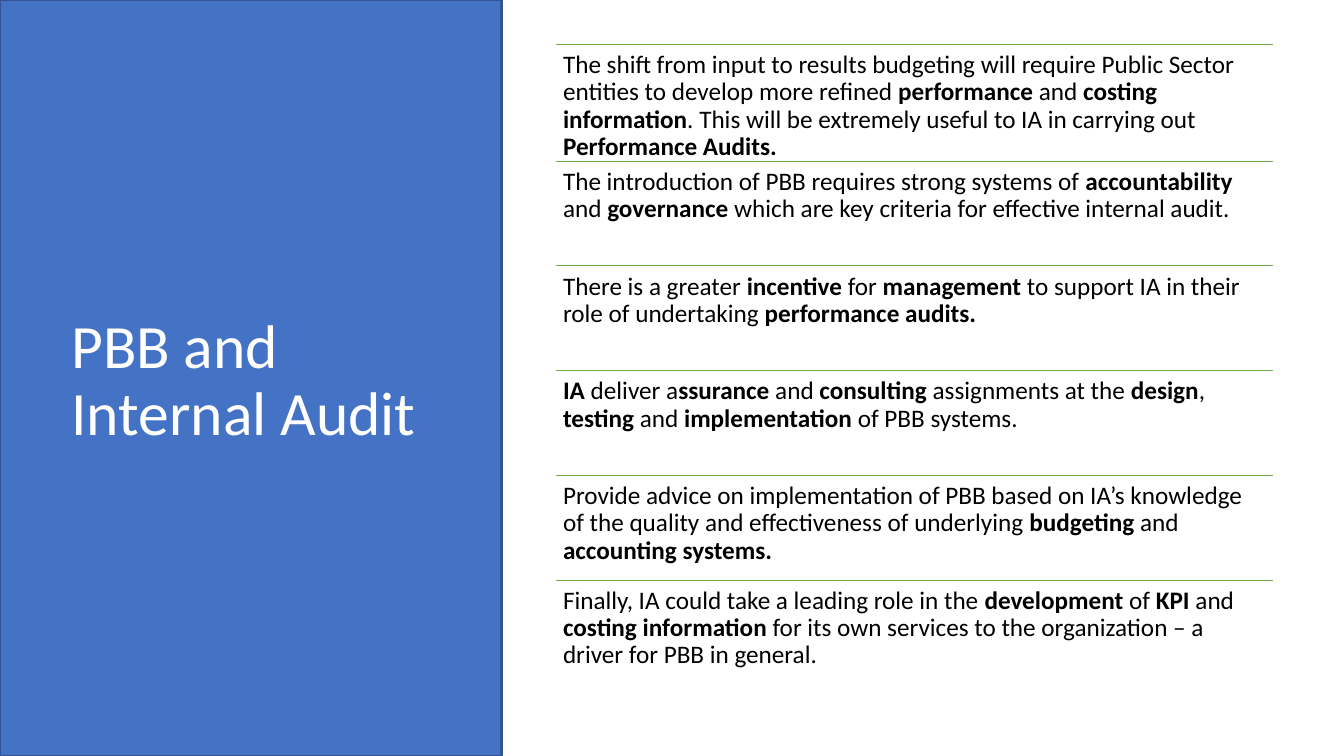
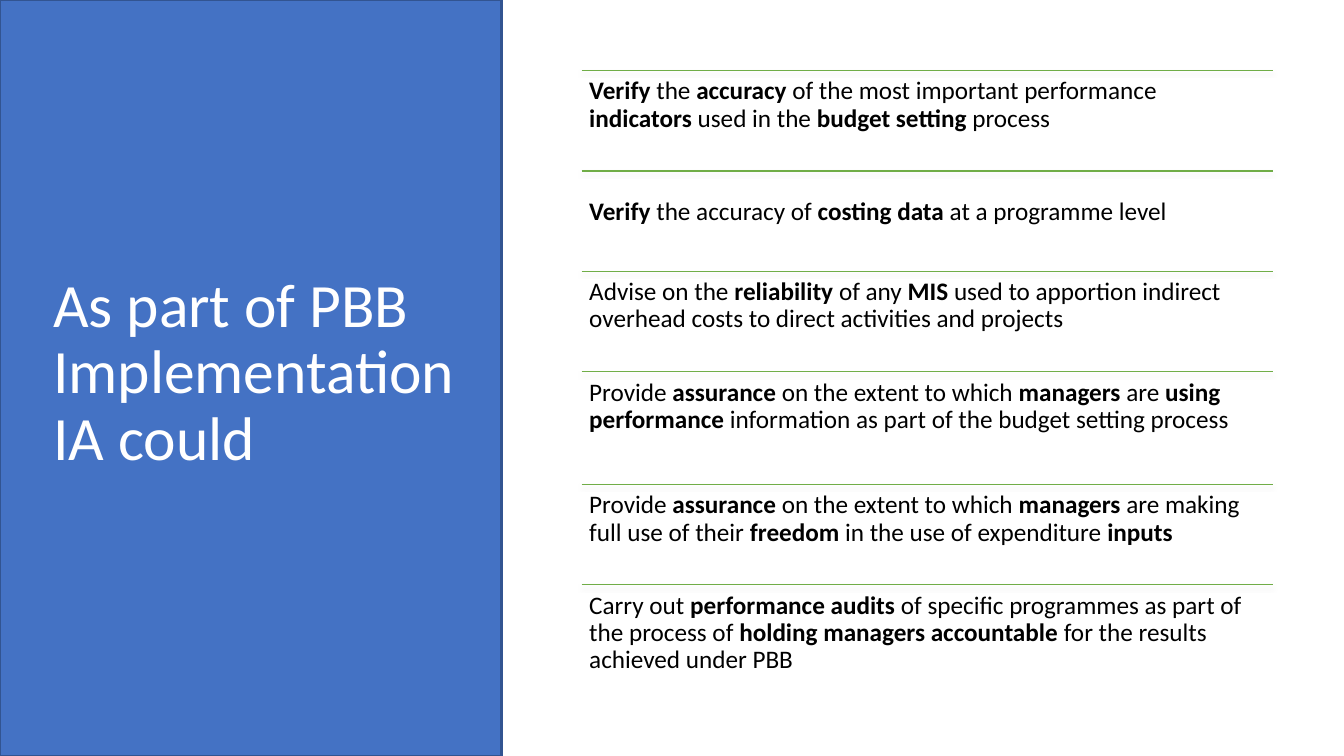
from lxml import etree
from pptx import Presentation
from pptx.dml.color import RGBColor
from pptx.enum.shapes import MSO_CONNECTOR, MSO_SHAPE
from pptx.enum.text import MSO_ANCHOR
from pptx.oxml.ns import qn
from pptx.util import Cm, Pt

THEME = {
    "panel": RGBColor(0x44, 0x72, 0xC4),
    "panel_line": RGBColor(0x32, 0x54, 0x91),
    "rule": RGBColor(0x70, 0xAD, 0x47),
    "title": {"name": "Calibri", "size": Pt(44), "color": RGBColor(0xFF, 0xFF, 0xFF)},
    "body": {"name": "Calibri", "size": Pt(18), "color": RGBColor(0, 0, 0)},
}
SLIDE_W, SLIDE_H = 33.87, 19.05
PANEL_W = 12.65
RULE_RIGHT = 32.08
INSET = 0.19
LINE_H = 0.7

# Each row: height, blank lines above the text, text with **bold** parts
SLIDES = [
    {
        "title": "PBB and Internal Audit", "title_at": (1.55, 1.98),
        "left": 14, "top": 1.12, "shadow": False,
        "rows": [
            (2.94, 0, "The shift from input to results budgeting will require Public Sector "
                      "entities to develop more refined **performance** and **costing information**. "
                      "This will be extremely useful to IA in carrying out **Performance Audits.**"),
            (2.64, 0, "The introduction of PBB requires strong systems of **accountability** and "
                      "**governance** which are key criteria for effective internal audit."),
            (2.64, 0, "There is a greater **incentive** for **management** to support IA in their "
                      "role of undertaking **performance audits.**"),
            (2.64, 0, "**IA **deliver a**ssurance** and **consulting** assignments at the **design**, "
                      "**testing** and **implementation** of PBB systems."),
            (2.64, 0, "Provide advice on implementation of PBB based on IA’s knowledge of the quality "
                      "and effectiveness of underlying **budgeting** and **accounting systems.**"),
            (2.64, 0, "Finally, IA could take a leading role in the **development** of **KPI **and "
                      "**costing information **for its own services to the organization – a driver "
                      "for PBB in general."),
        ],
    },
    {
        "title": "As part of PBB Implementation IA could", "title_at": (1.09, 1.78),
        "left": 14.66, "top": 1.78, "shadow": True,
        "rows": [
            (2.53, 0, "**Verify** the **accuracy** of the most important performance **indicators** "
                      "used in the **budget setting **process"),
            (2.53, 1, "**Verify** the accuracy of **costing data **at a programme level"),
            (2.53, 0, "Advise on the **reliability** of any **MIS **used to apportion indirect "
                      "overhead costs to direct activities and projects"),
            (2.84, 0, "Provide **assurance** on the extent to which **managers** are **using "
                      "performance** information as part of the budget setting process"),
            (2.53, 0, "Provide **assurance** on the extent to which **managers** are making full use "
                      "of their **freedom** in the use of expenditure **inputs**"),
            (2.53, 0, "Carry out **performance audits **of specific programmes as part of the process "
                      "of **holding managers accountable **for the results achieved under PBB"),
        ],
    },
]


def add_text(s, box, text, style, **frame):
    """Add a text box; parts of the text between ** marks are bold."""
    tf = s.shapes.add_textbox(*map(Cm, box)).text_frame
    tf.word_wrap = True
    for name, value in frame.items():
        setattr(tf, name, value)
    p = tf.paragraphs[0]
    p.line_spacing = 0.9
    for i, part in enumerate(text.split("**")):
        if not part:
            continue
        r = p.add_run()
        r.text = part
        r.font.color.rgb = style["color"]
        for name, value in {"name": style["name"], "size": style["size"], "bold": i % 2 == 1}.items():
            setattr(r.font, name, value)


def add_rule(s, left, y, shadow):
    line = s.shapes.add_connector(MSO_CONNECTOR.STRAIGHT, Cm(left), Cm(y), Cm(RULE_RIGHT), Cm(y))
    line.line.color.rgb = THEME["rule"]
    line.line.width = Pt(0.75)
    effects = etree.SubElement(line._element.spPr, qn("a:effectLst"))
    if shadow:
        outer = etree.SubElement(effects, qn("a:outerShdw"), blurRad=str(Pt(3.1)),
                                 dist=str(Pt(1.8)), dir="5400000", rotWithShape="0")
        color = etree.SubElement(outer, qn("a:srgbClr"), val="000000")
        etree.SubElement(color, qn("a:alpha"), val="35000")


prs = Presentation()
prs.slide_width, prs.slide_height = Cm(SLIDE_W), Cm(SLIDE_H)

for content in SLIDES:
    s = prs.slides.add_slide(prs.slide_layouts[6])

    panel = s.shapes.add_shape(MSO_SHAPE.RECTANGLE, 0, 0, Cm(PANEL_W), Cm(SLIDE_H))
    panel.shadow.inherit = False
    panel.fill.solid()
    panel.fill.fore_color.rgb = THEME["panel"]
    panel.line.color.rgb = THEME["panel_line"]
    panel.line.width = Pt(2)

    add_text(s, (*content["title_at"], 10.9, 15.29), content["title"], THEME["title"],
             vertical_anchor=MSO_ANCHOR.MIDDLE)

    left, y = content["left"], content["top"]
    for height, blank_lines, text in content["rows"]:
        add_rule(s, left, y, content["shadow"])
        add_text(s, (left, y, RULE_RIGHT - left, height), text, THEME["body"],
                 margin_left=Cm(INSET), margin_right=Cm(INSET), margin_bottom=Cm(INSET),
                 margin_top=Cm(INSET + blank_lines * LINE_H))
        y += height

prs.save("out.pptx")
